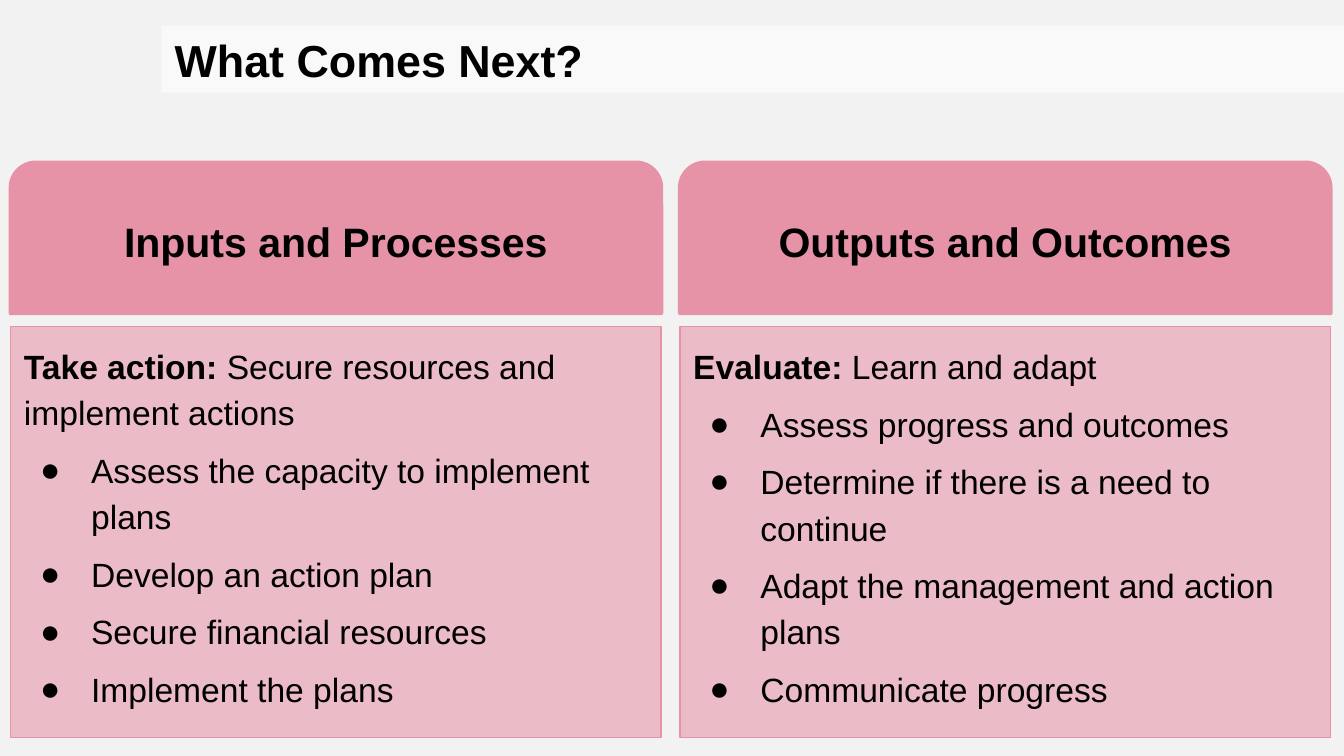
from lxml import etree
from pptx import Presentation
from pptx.dml.color import RGBColor
from pptx.enum.shapes import MSO_SHAPE
from pptx.enum.text import MSO_ANCHOR, MSO_AUTO_SIZE, PP_ALIGN
from pptx.oxml.ns import qn
from pptx.util import Inches, Pt

BLACK = RGBColor(0x00, 0x00, 0x00)
WHITE = RGBColor(0xFF, 0xFF, 0xFF)
PINK = RGBColor(0xE6, 0x92, 0xA7)
PAPER = RGBColor(0xF2, 0xF2, 0xF2)

TAB_SHAPE = MSO_SHAPE.ROUND_2_SAME_RECTANGLE
RECTANGLE = MSO_SHAPE.RECTANGLE
LEFT, CENTER = PP_ALIGN.LEFT, PP_ALIGN.CENTER
TOP, MIDDLE = MSO_ANCHOR.TOP, MSO_ANCHOR.MIDDLE
FIXED_SIZE = MSO_AUTO_SIZE.NONE

COLUMN_LEFT, COLUMN_STEP, COLUMN_WIDTH = 0.08, 4.98, 4.84
COLUMNS = [
    ("Inputs and Processes", "Take action:",
     " Secure resources and implement actions",
     ["Assess the capacity to implement plans", "Develop an action plan",
      "Secure financial resources", "Implement the plans"]),
    ("Outputs and Outcomes", "Evaluate:", " Learn and adapt",
     ["Assess progress and outcomes",
      "Determine if there is a need to continue",
      "Adapt the management and action plans", "Communicate progress"]),
]


class SlideBuilder:
    """Holds the style and the current slide."""

    font_name = "Arial"
    inset = Inches(0.1)

    def __init__(self, slide):
        self.slide = slide
        slide.background.fill.solid()
        slide.background.fill.fore_color.rgb = PAPER

    def apply(self, target, values):
        for name, value in values.items():
            setattr(target, name, value)

    def fill(self, shape, color, opacity=100):
        shape.fill.solid()
        shape.fill.fore_color.rgb = color
        if opacity < 100:
            color_node = shape.fill._xPr.find(qn("a:solidFill"))[0]
            etree.SubElement(color_node, qn("a:alpha"), val=str(opacity * 1000))

    def run(self, paragraph, text, size, bold=False):
        run = paragraph.add_run()
        run.text = text
        self.apply(run.font, {"name": self.font_name, "size": Pt(size), "bold": bold})
        run.font.color.rgb = BLACK

    def bullet(self, paragraph):
        properties = paragraph._p.get_or_add_pPr()
        properties.set("marL", str(Inches(0.5)))
        properties.set("indent", str(Inches(-0.38)))
        bullet_color = etree.SubElement(properties, qn("a:buClr"))
        etree.SubElement(bullet_color, qn("a:srgbClr"), val=str(BLACK))
        etree.SubElement(properties, qn("a:buFont"), typeface=self.font_name)
        etree.SubElement(properties, qn("a:buChar"), char="●")

    def title(self, text, left, top, width, height):
        title = self.slide.shapes.title
        self.apply(title, {"left": Inches(left), "top": Inches(top),
                           "width": Inches(width), "height": Inches(height)})
        self.fill(title, WHITE, 55)
        self.apply(title.text_frame, {"auto_size": FIXED_SIZE,
                                      "vertical_anchor": MIDDLE})
        paragraph = title.text_frame.paragraphs[0]
        paragraph.alignment = LEFT
        self.run(paragraph, text, 24, bold=True)

    def panel(self, kind, left, top, height, anchor, line_width, opacity=100):
        panel = self.slide.shapes.add_shape(
            kind, Inches(left), Inches(top), Inches(COLUMN_WIDTH), Inches(height))
        panel.shadow.inherit = False
        self.fill(panel, PINK, opacity)
        panel.line.color.rgb = PINK
        panel.line.width = Pt(line_width)
        self.apply(panel.text_frame, {
            "word_wrap": True, "vertical_anchor": anchor,
            "margin_left": self.inset, "margin_right": self.inset,
            "margin_top": self.inset, "margin_bottom": self.inset})
        return panel

    def heading(self, text, left):
        tab = self.panel(TAB_SHAPE, left, 1.21, 1.12, MIDDLE, 2.25)
        tab.adjustments[0] = 0.167
        paragraph = tab.text_frame.paragraphs[0]
        paragraph.alignment = CENTER
        self.run(paragraph, text, 22, bold=True)

    def body(self, lead, summary, steps, left):
        frame = self.panel(RECTANGLE, left, 2.43, 3.06, TOP, 0.75, 57).text_frame
        intro = frame.paragraphs[0]
        self.apply(intro, {"alignment": LEFT, "line_spacing": 1.15})
        self.run(intro, lead, 18, bold=True)
        self.run(intro, summary, 18)
        for step in steps:
            paragraph = frame.add_paragraph()
            self.bullet(paragraph)
            self.apply(paragraph, {"alignment": LEFT, "line_spacing": 1.15,
                                   "space_before": Pt(6)})
            self.run(paragraph, step, 18)


def main():
    # Widescreen page, 16 to 9
    presentation = Presentation()
    presentation.slide_width = Inches(10)
    presentation.slide_height = Inches(10 * 9 / 16)
    title_only = presentation.slide_layouts[5]
    builder = SlideBuilder(presentation.slides.add_slide(title_only))

    # Two columns, each a heading tab over a body panel
    for index, (heading, lead, summary, steps) in enumerate(COLUMNS):
        left = COLUMN_LEFT + index * COLUMN_STEP
        builder.heading(heading, left)
        builder.body(lead, summary, steps, left)

    # Title band
    builder.title("What Comes Next?", 1.2, 0.19, 8.8, 0.5)

    presentation.save("out.pptx")


if __name__ == "__main__":
    main()
